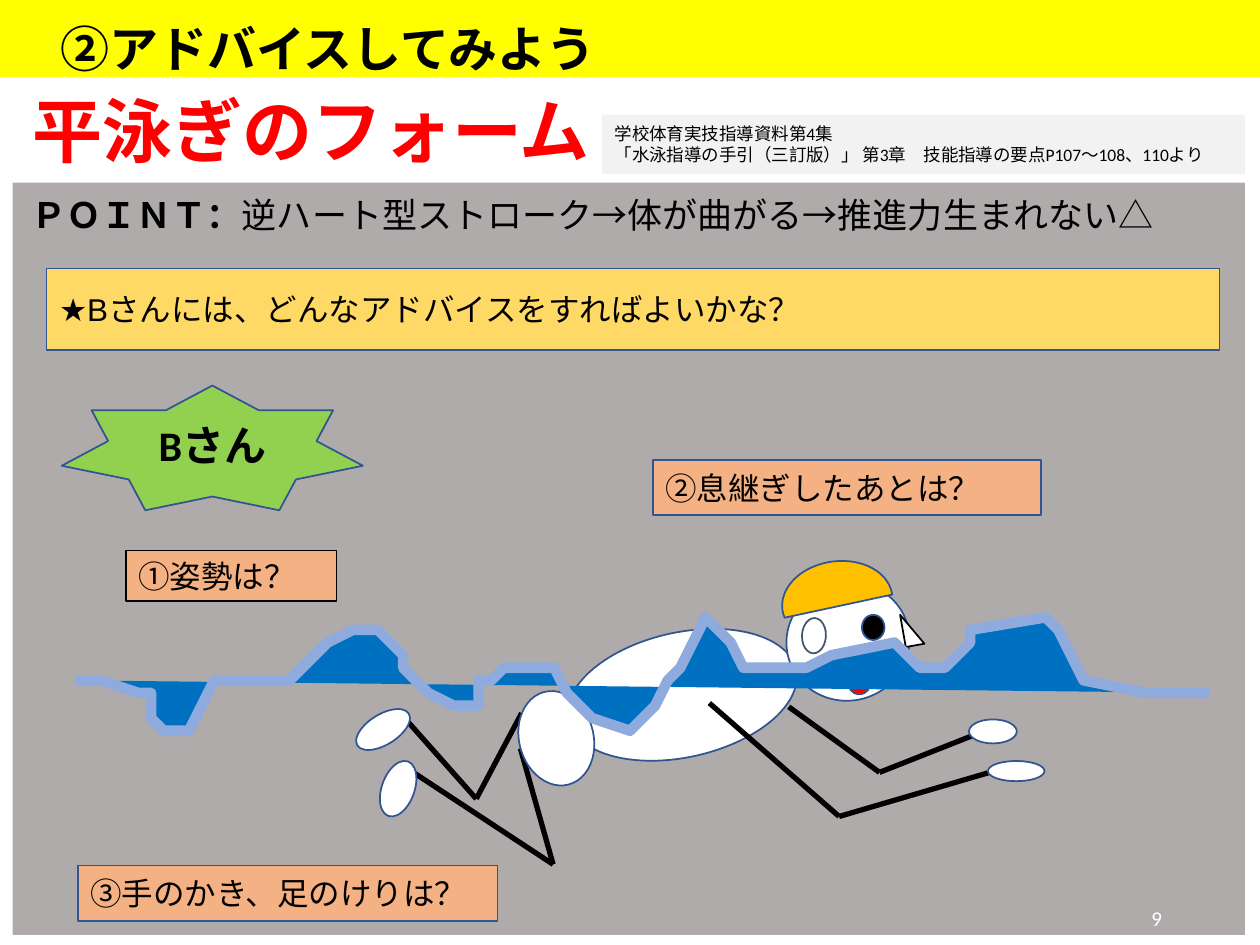
from lxml import etree
from pptx import Presentation
from pptx import util as u
from pptx.dml.color import RGBColor
from pptx.enum import shapes, text
from pptx.oxml.ns import qn

COLUMNS, ROWS = 100, 75
CELL = u.Inches(0.1)

BLACK = RGBColor(0x00, 0x00, 0x00)
WHITE = RGBColor(0xFF, 0xFF, 0xFF)
RED = RGBColor(0xFF, 0x00, 0x00)
YELLOW = RGBColor(0xFF, 0xFF, 0x00)
POOL_GREY = RGBColor(0xAF, 0xAB, 0xAB)
PALE_GREY = RGBColor(0xF2, 0xF2, 0xF2)
SAND = RGBColor(0xFF, 0xD9, 0x66)
PEACH = RGBColor(0xF4, 0xB1, 0x83)
GREEN = RGBColor(0x92, 0xD0, 0x50)
CAP_ORANGE = RGBColor(0xFF, 0xC0, 0x00)
WATER = RGBColor(0x00, 0x70, 0xC0)
FOAM = RGBColor(0x8F, 0xAA, 0xDC)
OUTLINE = RGBColor(0x32, 0x54, 0x91)
SLATE = RGBColor(0x44, 0x54, 0x6A)

KIND = shapes.MSO_SHAPE
MIDDLE, TOP = text.MSO_ANCHOR.MIDDLE, text.MSO_ANCHOR.TOP
LEFT, CENTER, RIGHT = text.PP_ALIGN.LEFT, text.PP_ALIGN.CENTER, text.PP_ALIGN.RIGHT

# Joints of each limb and points along the waterline, in grid columns and rows
LEGS = [
    [(32.3, 57.2), (37.8, 63.4), (41.4, 56.6)],
    [(32.8, 61.3), (43.9, 68.6), (41.3, 59.4)],
]
ARMS = [
    [(62.6, 56.1), (69.8, 61.3), (77.4, 58.3)],
    [(56.3, 55.8), (66.6, 64.8), (78.9, 61.2)],
]
WATERLINE = [
    (96, 55.1), (91.3, 54.9), (86.5, 54.2), (85.6, 53.6), (84.9, 52.4), (83.8, 50),
    (82.9, 49.3), (77.3, 50.3), (76.7, 51), (75.8, 51.8), (75.2, 53.2), (74.1, 53.3),
    (72.9, 52.6), (72.2, 52), (71.3, 51.3), (65.9, 52.2), (64.2, 53), (61.7, 52.8),
    (59.2, 52.6), (57.8, 51.2), (57.2, 49.7), (56.3, 49.1), (54.6, 50.6), (53.8, 52.8),
    (53, 54.3), (52.4, 55.7), (51.1, 57.1), (49.5, 58), (46.8, 57.4), (46.1, 56),
    (45.1, 55.4), (44.4, 53.2), (43.1, 52.6), (41.4, 52.7), (39.9, 53.2), (39.2, 53.5),
    (38.5, 54.2), (37.7, 55.7), (36, 55.6), (34.3, 55.1), (32.9, 53.8), (32.2, 53.1),
    (31.5, 51.7), (30, 50.3), (29.3, 49.6), (27.6, 50.3), (26, 51.2), (25.4, 52),
    (24.3, 52.7), (23.4, 53.5), (20.2, 54.1), (16.9, 54.5), (16.1, 56.2), (15.1, 57.5),
    (14.4, 58.2), (13.1, 57.8), (12.1, 56.9), (11.6, 55.4), (10.9, 54.8), (7.5, 54.2),
    (6.7, 53.5), (5.9, 53.6),
]


def cells(*counts):
    return [round(count * CELL) for count in counts]


def paint(shape, fill, line, width):
    shape.shadow.inherit = False
    if fill is None:
        shape.fill.background()
    else:
        shape.fill.solid()
        shape.fill.fore_color.rgb = fill
    if line is None:
        shape.line.fill.background()
    else:
        shape.line.color.rgb = line
        shape.line.width = u.Pt(width)


def add_figure(slide, kind, box, fill, line=None, width=1, rotation=0, flip=False):
    figure = slide.shapes.add_shape(kind, *cells(*box))
    paint(figure, fill, line, width)
    figure.rotation = rotation
    if flip:
        figure._element.spPr.find(qn("a:xfrm")).set("flipV", "1")
    return figure


def write(shape, *paragraphs, size, font="Arial", color=BLACK, bold=False,
          align=LEFT, anchor=MIDDLE, side_inset=0.1):
    """Write paragraphs; each is a string or a list of (words, bold) pairs."""
    frame = shape.text_frame
    frame.word_wrap = True
    frame.auto_size = text.MSO_AUTO_SIZE.NONE
    frame.vertical_anchor = anchor
    frame.margin_left = frame.margin_right = u.Inches(side_inset)
    for index, content in enumerate(paragraphs):
        paragraph = frame.paragraphs[0] if index == 0 else frame.add_paragraph()
        paragraph.alignment = align
        pieces = [(content, bold)] if isinstance(content, str) else content
        for words, is_bold in pieces:
            run = paragraph.add_run()
            run.text = words
            run.font.size, run.font.name, run.font.bold = u.Pt(size), font, is_bold
            run.font.color.rgb = color


def add_note(slide, box, *paragraphs, **style):
    note = slide.shapes.add_textbox(*cells(*box))
    write(note, *paragraphs, **style)


def add_limb(slide, joints):
    for start, end in zip(joints, joints[1:]):
        bone = slide.shapes.add_connector(
            shapes.MSO_CONNECTOR.STRAIGHT, *cells(*start, *end))
        bone.line.color.rgb = BLACK
        bone.line.width = u.Pt(3)
        etree.SubElement(bone._element.spPr, qn("a:effectLst"))


def add_swimmer(slide):
    def oval(box, fill=WHITE, line=OUTLINE, rotation=0):
        add_figure(slide, KIND.OVAL, box, fill, line, rotation=rotation)

    add_limb(slide, LEGS[0])
    oval((44.9, 50.2, 18.5, 9.9), rotation=347.5)  # trunk
    for limb in [LEGS[1], *ARMS]:
        add_limb(slide, limb)
    oval((62.4, 46.2, 9.8, 9.4), rotation=344.2)  # head
    add_figure(slide, KIND.RIGHT_TRIANGLE, (71.1, 49.2, 2.6, 1.5), WHITE, BLACK,
               rotation=260, flip=True)  # nose
    oval((67.4, 53.8, 1.6, 1.3), fill=RED)  # mouth
    oval((68.4, 48.8, 1.8, 2), fill=BLACK)  # eye
    cap = add_figure(slide, KIND.CHORD, (63.2, 43.4, 6.5, 8.8), CAP_ORANGE, OUTLINE,
                     rotation=82.1)
    cap.adjustments[0], cap.adjustments[1] = 48.91, 162
    oval((63.2, 49.5, 2.8, 1.9), line=SLATE, rotation=272.5)  # ear
    oval((78.4, 60.4, 4.5, 1.6))  # hands
    oval((76.9, 57.1, 3.8, 1.9))
    oval((29.2, 55.5, 2.4, 4.8), rotation=58.1)  # feet
    oval((30.3, 60.3, 2.6, 4.6), rotation=19.8)
    oval((41.2, 54.8, 5.9, 7.6), rotation=345.1)  # hip


def add_water(slide):
    builder = slide.shapes.build_freeform(*WATERLINE[0], scale=float(CELL))
    builder.add_line_segments(WATERLINE[1:], close=False)
    water = builder.convert_to_shape()
    paint(water, WATER, FOAM, 6)
    etree.SubElement(water.line._get_or_add_ln(), qn("a:round"))


def add_title(slide):
    title = slide.shapes.title
    title.left, title.top, title.width, title.height = cells(3.8, 0.6, 89.3, 6.4)
    write(title, "②アドバイスしてみよう", size=28, font="Calibri", bold=True)
    slide.shapes._spTree.append(title._element)  # in front of the yellow band


def add_panel(slide, box, fill, *paragraphs, line=OUTLINE, width=1,
              kind=KIND.RECTANGLE, **style):
    panel = add_figure(slide, kind, box, fill, line, width)
    write(panel, *paragraphs, **style)


def main():
    deck = Presentation()
    deck.slide_width, deck.slide_height = cells(COLUMNS, ROWS)
    slide = deck.slides.add_slide(deck.slide_layouts[5])

    add_figure(slide, KIND.RECTANGLE, (1, 14.5, 97.8, 59.7), POOL_GREY)
    add_figure(slide, KIND.RECTANGLE, (-0.2, 0, 100.2, 6.1), YELLOW)
    add_note(slide, (70.7, 70.9, 22.5, 4), "9", size=12, font="Calibri",
             color=WHITE, align=RIGHT)
    add_panel(slide, (10, 43.7, 16.7, 4), PEACH, "①姿勢は？", line=BLACK,
              width=0.75, size=18, anchor=TOP)
    add_swimmer(slide)
    add_panel(slide, (51.8, 36.5, 30.8, 4.4), PEACH, "②息継ぎしたあとは？", size=18)
    add_panel(slide, (4.9, 30.6, 23.9, 9.9), GREEN, "Bさん", kind=KIND.STAR_7_POINT,
              size=24, font="Calibri", bold=True, align=CENTER)
    add_water(slide)
    add_note(slide, (2.3, 14.9, 93.5, 6.4),
             [("ＰＯＩＮＴ：", True),
              ("逆ハート型ストローク→体が曲がる→推進力生まれない△", False)],
             size=20, anchor=TOP, side_inset=0.02)
    add_panel(slide, (1.6, 6.7, 47.9, 7.1), WHITE, "平泳ぎのフォーム", line=None,
              size=40, color=RED, bold=True)
    add_title(slide)
    add_panel(slide, (3.7, 21.3, 93.1, 6.5), SAND,
              "★Bさんには、どんなアドバイスをすればよいかな？", size=18)
    add_panel(slide, (6.2, 68.7, 33.3, 4.4), PEACH, "③手のかき、足のけりは？",
              size=18, font="Calibri")
    add_panel(slide, (47.8, 9.1, 51, 4.7), PALE_GREY, "学校体育実技指導資料第4集",
              "「水泳指導の手引（三訂版）」 第3章　技能指導の要点P107～108、110より",
              line=None, size=10, font="Calibri")
    deck.save("out.pptx")


if __name__ == "__main__":
    main()
